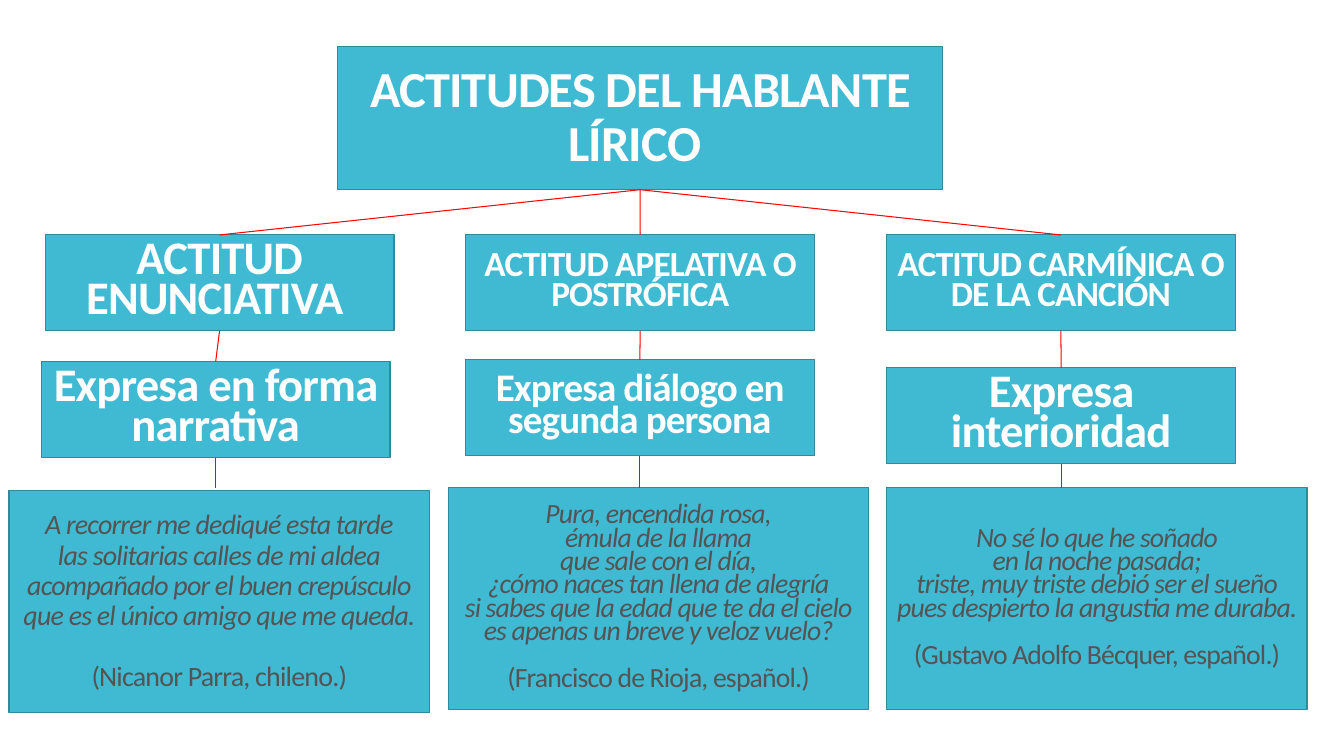
"""Builds a concept map of the three attitudes of the lyric speaker."""
from lxml import etree
from pptx import Presentation
from pptx.dml.color import RGBColor
from pptx.enum.shapes import MSO_CONNECTOR, MSO_SHAPE
from pptx.enum.text import MSO_ANCHOR, PP_ALIGN
from pptx.oxml.ns import qn
from pptx.util import Cm, Pt

RECTANGLE = MSO_SHAPE.RECTANGLE
STRAIGHT = MSO_CONNECTOR.STRAIGHT
MIDDLE = MSO_ANCHOR.MIDDLE
CENTER = PP_ALIGN.CENTER
TOP, BOTTOM = 0, 2

COLORS = {"box": "40BAD2", "border": "2F8A9B", "link": "FF0000",
          "heading": "FFFFFF", "verse": "545454"}
FONT = "Calibri"

TITLE = "ACTITUDES DEL HABLANTE LÍRICO "
ATTITUDES = [
    {"name": ["ACTITUD", "ENUNCIATIVA "], "name_size": 33.3,
     "message": "Expresa en forma narrativa", "message_size": 33.3,
     "message_at": (1.04, 9.12),
     "verse": "A recorrer me dediqué esta tarde\n"
              "las solitarias calles de mi aldea\n"
              "acompañado por el buen crepúsculo\n"
              "que es el único amigo que me queda.",
     "poet": "(Nicanor Parra, chileno.)",
     "verse_at": (0.23, 12.37), "verse_size": 20, "verse_spacing": 0.9},
    {"name": ["ACTITUD APELATIVA O POSTRÓFICA"], "name_size": 25.2,
     "message": "Expresa diálogo en segunda persona", "message_size": 27.9,
     "message_at": (11.73, 9.07),
     "verse": "Pura, encendida rosa,\n"
              "émula de la llama\n"
              "que sale con el día,\n"
              "¿cómo naces tan llena de alegría\n"
              "si sabes que la edad que te da el cielo\n"
              "es apenas un breve y veloz vuelo?",
     "poet": "(Francisco de Rioja, español.)",
     "verse_at": (11.3, 12.29), "verse_size": 19.8, "verse_spacing": 0.7},
    {"name": ["ACTITUD CARMÍNICA O DE LA CANCIÓN"], "name_size": 25.2,
     "message": "Expresa interioridad", "message_size": 33.3,
     "message_at": (22.35, 9.27),
     "verse": "No sé lo que he soñado\n"
              "en la noche pasada;\n"
              "triste, muy triste debió ser el sueño\n"
              "pues despierto la angustia me duraba.",
     "poet": "(Gustavo Adolfo Bécquer, español.)",
     "verse_at": (22.35, 12.29), "verse_size": 19.8, "verse_spacing": 0.7},
]

TITLE_AT, TITLE_EXTENT = (8.51, 1.17), (15.24, 3.61)
NAME_LEFT, NAME_TOP, NAME_PITCH = 1.14, 5.92, 10.6
LABEL_EXTENT, VERSE_EXTENT = (8.79, 2.41), (10.59, 5.59)
VERSE_LINK_END = 12.29
LINE_HEIGHT = 1.22


def color(name):
    """Return the named colour."""
    return RGBColor.from_string(COLORS[name])


def add_box(page, place, extent):
    """Add a bordered rectangle, measured in centimetres."""
    box = page.shapes.add_shape(RECTANGLE, *map(Cm, place + extent))
    box.shadow.inherit = False
    box.fill.solid()
    box.fill.fore_color.rgb = color("box")
    box.line.color.rgb = color("border")
    box.line.width = Pt(0.85)
    box.text_frame.word_wrap = True
    box.text_frame.vertical_anchor = MIDDLE
    return box


def write(box, text, size, spacing=0.7, ink="heading", bold=False,
          italic=False, before=0):
    """Write one formatted paragraph after the text already in the box."""
    frame = box.text_frame
    para = frame.add_paragraph() if frame.text else frame.paragraphs[0]
    para.text = text
    para.alignment = CENTER
    para.line_spacing = spacing
    para.space_before = Pt(before)
    for span in para.runs:
        span.font.name = FONT
        span.font.size = Pt(size)
        span.font.bold = bold
        span.font.italic = italic
        span.font.color.rgb = color(ink)
        span.font._element.set("spc", "-60")


def add_link(page, upper, lower=None):
    """Join the bottom of a box to the top of another or to the verse row."""
    center = upper.left + upper.width // 2
    link = page.shapes.add_connector(
        STRAIGHT, center, upper.top + upper.height, center, Cm(VERSE_LINK_END))
    link.begin_connect(upper, BOTTOM)
    if lower is not None:
        link.end_connect(lower, TOP)
    link.line.color.rgb = color("link")
    link.line.width = Pt(0.75)
    etree.SubElement(link._element.spPr, qn("a:effectLst"))


def add_attitude(page, title, column, attitude):
    """Add one column of boxes hanging from the title."""
    name = add_box(page, (NAME_LEFT + column * NAME_PITCH, NAME_TOP), LABEL_EXTENT)
    for line in attitude["name"]:
        write(name, line, attitude["name_size"], bold=True)

    message = add_box(page, attitude["message_at"], LABEL_EXTENT)
    write(message, attitude["message"], attitude["message_size"], bold=True)

    verse = add_box(page, attitude["verse_at"], VERSE_EXTENT)
    size, spacing = attitude["verse_size"], attitude["verse_spacing"]
    write(verse, attitude["verse"], size, spacing, ink="verse", italic=True)
    write(verse, attitude["poet"], size, spacing, ink="verse",
          before=round(size * spacing * LINE_HEIGHT))

    add_link(page, title, name)
    add_link(page, name, message)
    add_link(page, message)


def main():
    """Build and save the deck."""
    deck = Presentation()
    deck.slide_width, deck.slide_height = Cm(33.87), Cm(19.05)
    page = deck.slides.add_slide(deck.slide_layouts[6])
    title = add_box(page, TITLE_AT, TITLE_EXTENT)
    write(title, TITLE, 36, spacing=0.9, bold=True)
    for column, attitude in enumerate(ATTITUDES):
        add_attitude(page, title, column, attitude)
    deck.save("out.pptx")


if __name__ == "__main__":
    main()
